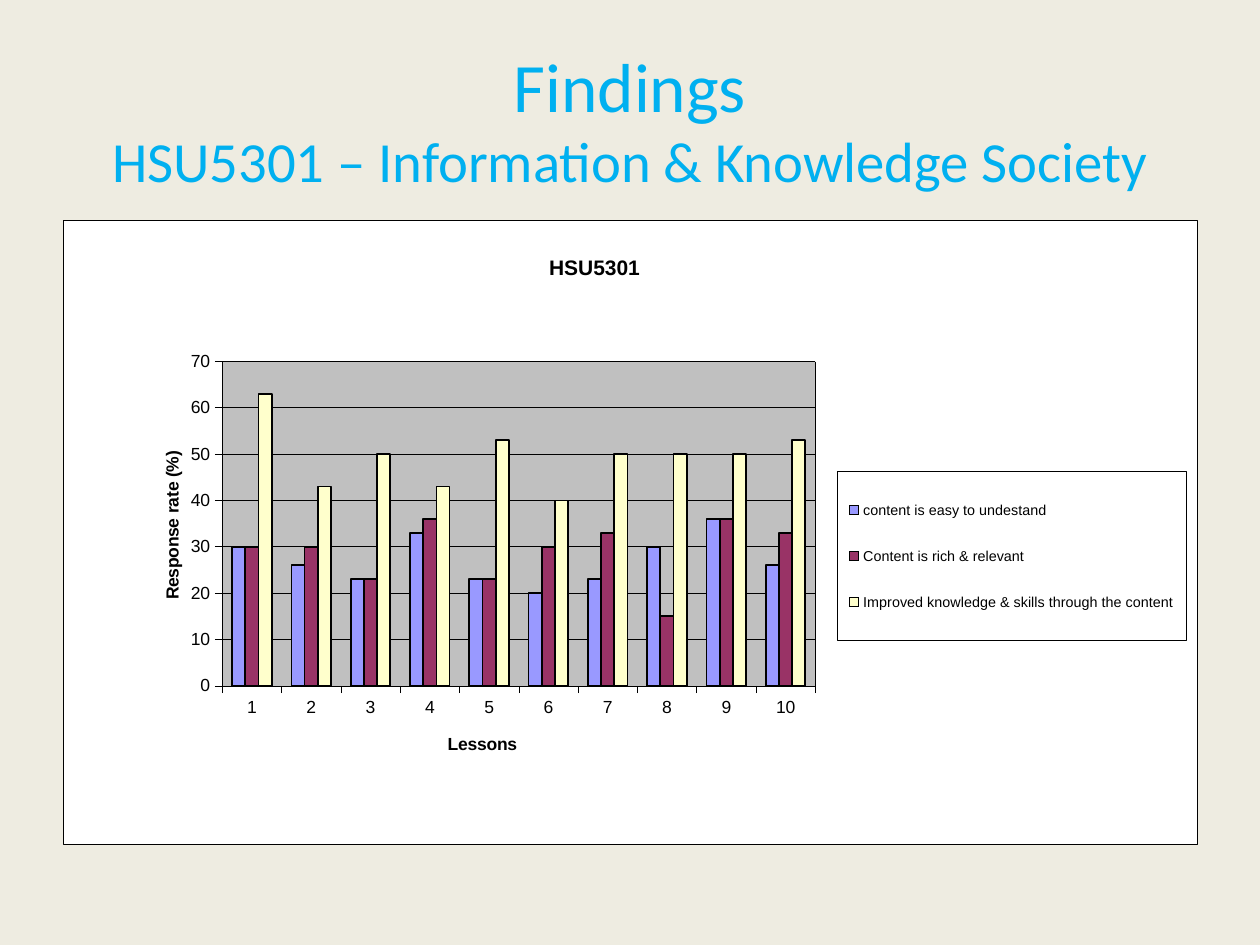
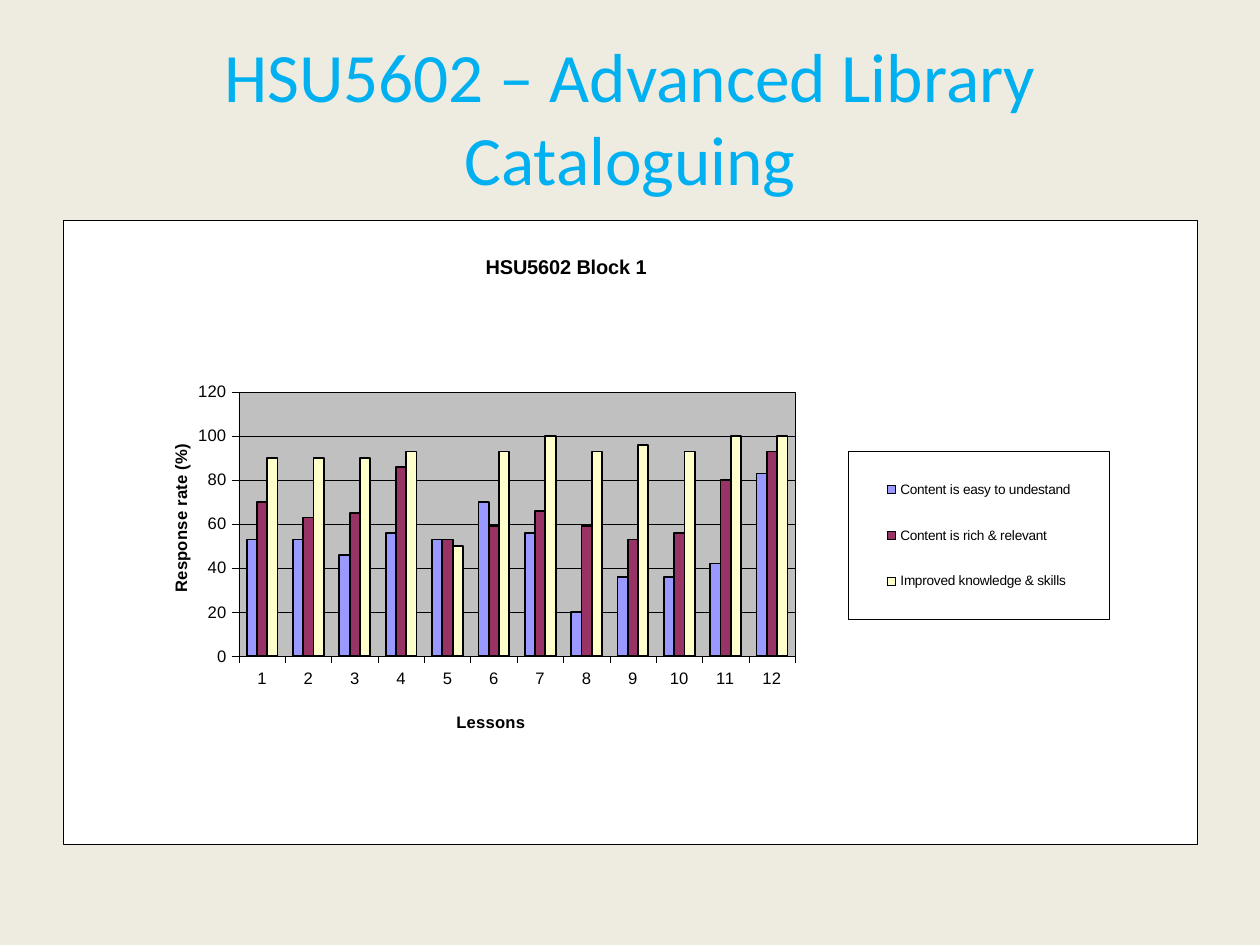
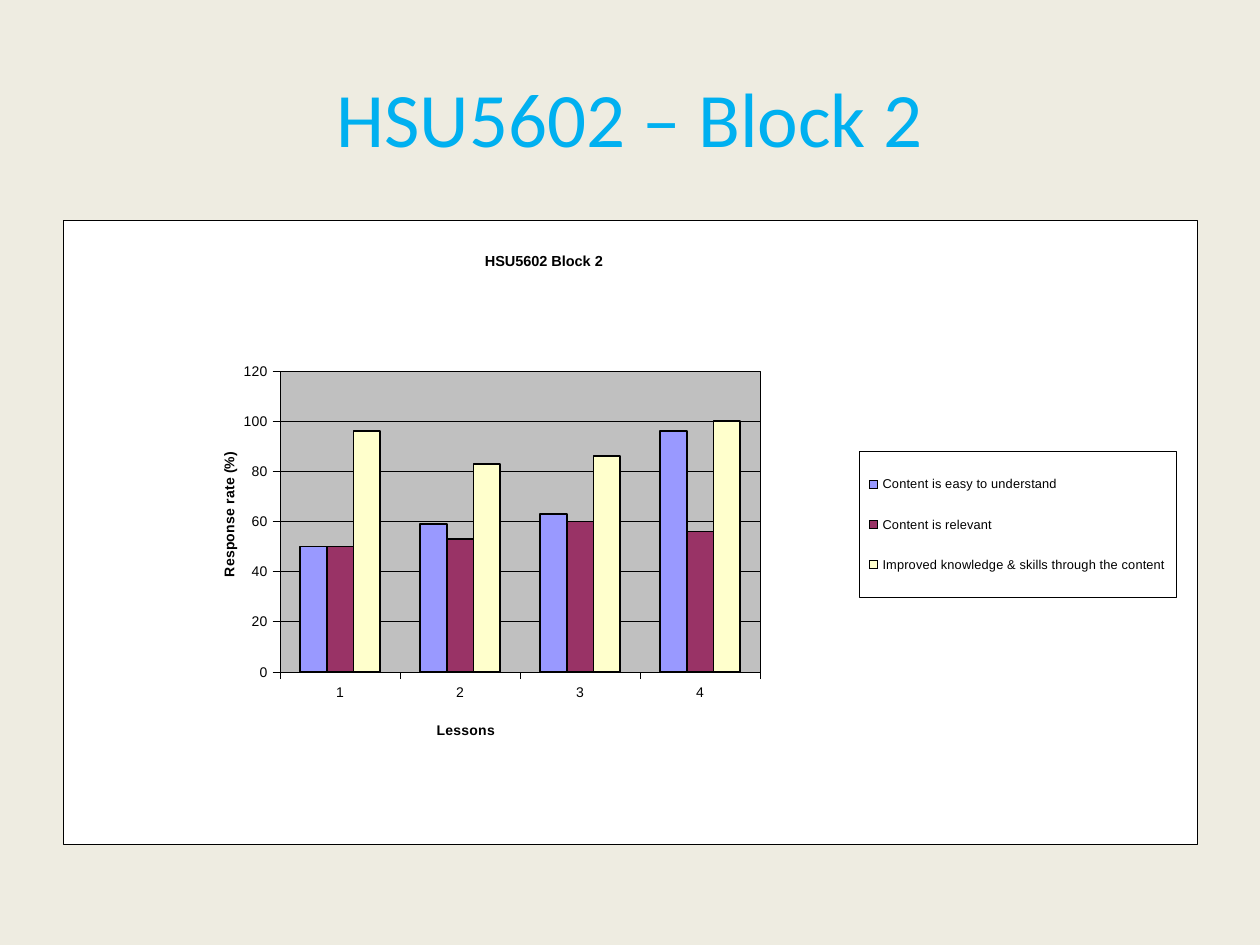
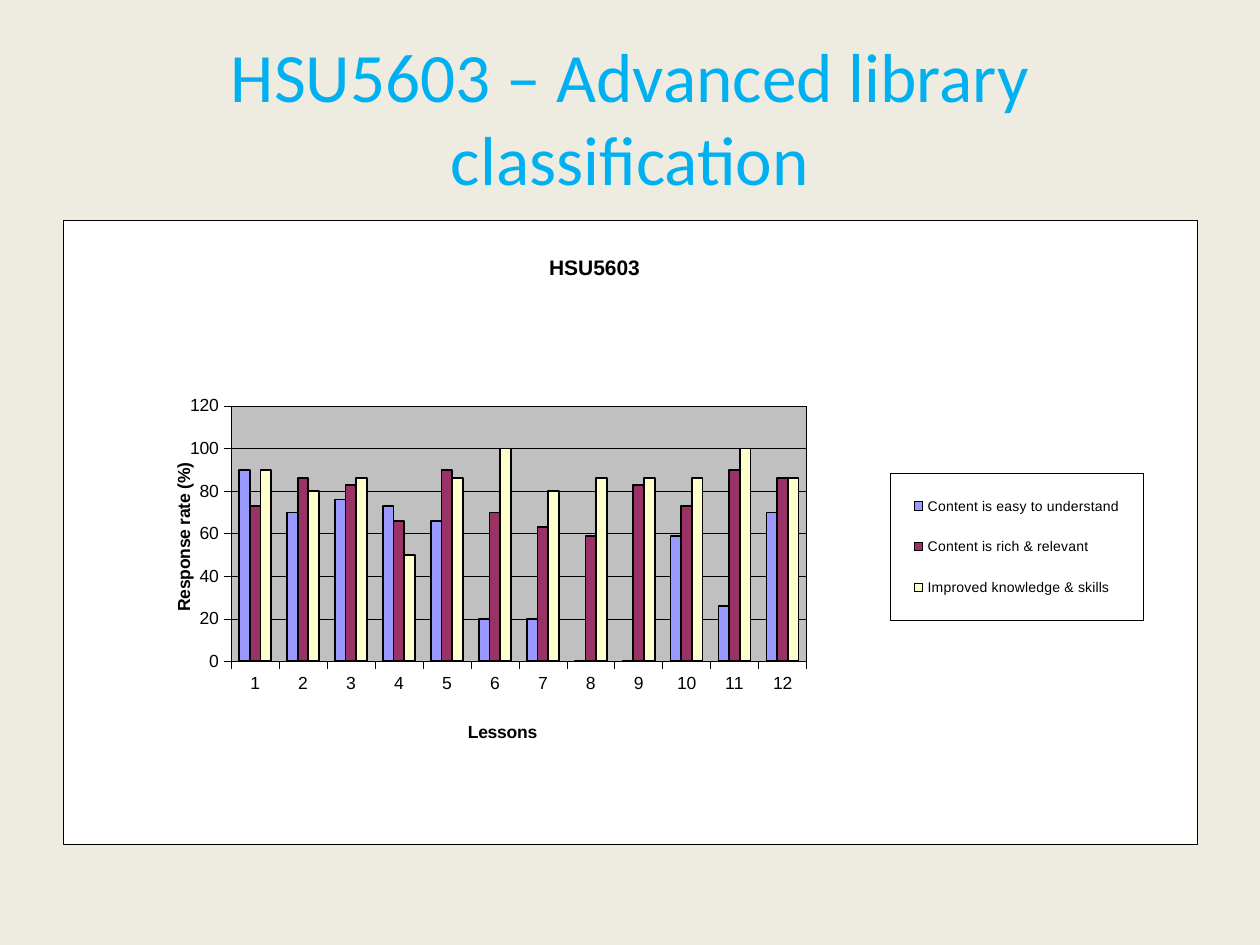
"""Build four slides of course survey findings, each with a clustered column chart."""
from lxml.etree import SubElement
from pptx import Presentation
from pptx.chart.data import CategoryChartData
from pptx.dml.color import RGBColor
from pptx.enum.chart import XL_CHART_TYPE as ChartType, XL_LEGEND_POSITION as LegendPos
from pptx.enum.chart import XL_TICK_MARK as TickMark
from pptx.enum.text import MSO_ANCHOR, MSO_AUTO_SIZE, PP_ALIGN
from pptx.oxml import parse_xml
from pptx.oxml.ns import nsdecls, qn
from pptx.util import Pt

BACKGROUND, TITLE_BLUE, BLACK, WHITE, PLOT_GREY = "EEECE1", "00B0F0", "000000", "FFFFFF", "C0C0C0"
SERIES_COLOURS = ["9999FF", "993366", "FFFFCC"]
CHART_FRAME = (36, 126, 648, 356.4)
HAIRLINE = 0.25

SLIDES = [
    {
        "heading": [("Findings\v", 39.6), ("HSU5301 – Information & Knowledge Society", 32.4)],
        "heading_box": (36, 23.76, 648, 87.84),
        "caption": ("HSU5301", 12, (275.5, 17)),
        "sizes": {"axes": 10, "legend": 8.2},
        "scale": (70, 10),
        "border_dash": "sysDot",
        "plot": (91, 80.5, 339, 185.5),
        "legend": (442.5, 143.5, 199.5, 96.5),
        "lessons_at": (218, 291),
        "rate_at": (54, 130),
        "responses": {
            "content is easy to undestand": [30, 26, 23, 33, 23, 20, 23, 30, 36, 26],
            "Content is rich & relevant": [30, 30, 23, 36, 23, 30, 33, 15, 36, 33],
            "Improved knowledge & skills through the content":
                [63, 43, 50, 43, 53, 40, 50, 50, 50, 53],
        },
    },
    {
        "heading": [("HSU5602 – Advanced Library Cataloguing", 39.6)],
        "heading_box": (36, 21.6, 648, 90),
        "caption": ("HSU5602 Block 1", 11.4, (239.5, 17)),
        "sizes": {"axes": 9.5, "legend": 7.8},
        "scale": (120, 20),
        "border_dash": "solid",
        "plot": (100.5, 98, 318, 151),
        "legend": (449, 132, 149, 96),
        "lessons_at": (223, 278.5),
        "rate_at": (59, 126),
        "responses": {
            "Content is easy to undestand": [53, 53, 46, 56, 53, 70, 56, 20, 36, 36, 42, 83],
            "Content is rich & relevant": [70, 63, 65, 86, 53, 59, 66, 59, 53, 56, 80, 93],
            "Improved knowledge & skills": [90, 90, 90, 93, 50, 93, 100, 93, 96, 93, 100, 100],
        },
    },
    {
        "heading": [("HSU5602 – Block 2", 44)],
        "heading_box": (36, 21.6, 648, 90),
        "caption": ("HSU5602 Block 2", 8.3, (239.5, 16)),
        "sizes": {"axes": 8, "legend": 7.3},
        "scale": (120, 20),
        "border_dash": "solid",
        "plot": (124, 86, 274.5, 172),
        "legend": (455, 132, 181, 83.5),
        "lessons_at": (212, 284.5),
        "rate_at": (88, 130.5),
        "responses": {
            "Content is easy to understand": [50, 59, 63, 96],
            "Content is relevant": [50, 53, 60, 56],
            "Improved knowledge & skills through the content": [96, 83, 86, 100],
        },
    },
    {
        "heading": [("HSU5603 – Advanced library classification", 39.6)],
        "heading_box": (36, 21.6, 648, 90),
        "caption": ("HSU5603", 12, (275.5, 17)),
        "sizes": {"axes": 10, "legend": 8},
        "scale": (120, 20),
        "border_dash": "solid",
        "plot": (96, 106, 329, 146),
        "legend": (473, 144.5, 144.5, 84),
        "lessons_at": (229.5, 284),
        "rate_at": (60.5, 136.5),
        "responses": {
            "Content is easy to understand": [90, 70, 76, 73, 66, 20, 20, 0, 0, 59, 26, 70],
            "Content is rich & relevant": [73, 86, 83, 66, 90, 70, 63, 59, 83, 73, 90, 86],
            "Improved knowledge & skills": [90, 80, 86, 50, 86, 100, 80, 86, 86, 86, 100, 86],
        },
    },
]


def rgb(colour):
    return RGBColor.from_string(colour)


def apply(target, values):
    for key, value in values.items():
        setattr(target, key, value)


def style_font(font, size, colour=BLACK, name="Arial", bold=False):
    apply(font, {"size": Pt(size), "name": name, "bold": bold})
    font.color.rgb = rgb(colour)


def style_line(line, width=HAIRLINE):
    line.width = Pt(width)
    line.color.rgb = rgb(BLACK)


def area_format(fill, dash="solid"):
    return parse_xml(
        f'<c:spPr {nsdecls("c", "a")}><a:solidFill><a:srgbClr val="{fill}"/></a:solidFill>'
        f'<a:ln w="{Pt(HAIRLINE)}"><a:solidFill><a:srgbClr val="{BLACK}"/></a:solidFill>'
        f'<a:prstDash val="{dash}"/></a:ln></c:spPr>')


def place(part, box, index=1, inner=False):
    """Set a manual layout from points measured inside the chart frame."""
    for old in part.findall(qn("c:layout")):
        part.remove(old)
    layout = parse_xml(f'<c:layout {nsdecls("c")}><c:manualLayout/></c:layout>')
    settings = [("layoutTarget", "inner")] if inner else []
    settings += [("xMode", "edge"), ("yMode", "edge")]
    settings += [(side, f"{length / CHART_FRAME[2 + i % 2]:.4f}")
                 for i, (side, length) in enumerate(zip("xywh", box))]
    for tag, value in settings:
        SubElement(layout[0], qn(f"c:{tag}"), val=value)
    part.insert(index, layout)


def label(title, text, size, at):
    title.text_frame.text = text
    style_font(title.text_frame.paragraphs[0].runs[0].font, size, bold=True)
    element = title.text_frame._txBody.getparent().getparent()
    place(element, at)
    return element


def style_axis(axis, text, size, at):
    apply(axis, {"major_tick_mark": TickMark.OUTSIDE, "minor_tick_mark": TickMark.NONE})
    style_font(axis.tick_labels.font, size)
    style_line(axis.format.line)
    return label(axis.axis_title, text, size, at)


def add_heading(slide, content):
    heading = slide.shapes.title
    apply(heading, dict(zip(("left", "top", "width", "height"), map(Pt, content["heading_box"]))))
    frame = heading.text_frame
    apply(frame, {"vertical_anchor": MSO_ANCHOR.MIDDLE, "auto_size": MSO_AUTO_SIZE.NONE,
                  "word_wrap": True})
    paragraph = frame.paragraphs[0]
    paragraph.alignment = PP_ALIGN.CENTER
    for text, size in content["heading"]:
        run = paragraph.add_run()
        run.text = text.rstrip("\v")
        style_font(run.font, size, TITLE_BLUE, "Calibri")
        if text.endswith("\v"):
            paragraph.add_line_break()


def add_responses(slide, content):
    responses, sizes = content["responses"], content["sizes"]
    lesson_count = len(next(iter(responses.values())))
    data = CategoryChartData()
    data.categories = [str(number + 1) for number in range(lesson_count)]
    for statement, rates in responses.items():
        data.add_series(statement, rates)
    chart = slide.shapes.add_chart(
        ChartType.COLUMN_CLUSTERED, *map(Pt, CHART_FRAME), data).chart

    style_font(chart.font, sizes["axes"])
    chart.element.find(qn("c:txPr")).addprevious(area_format(WHITE))
    label(chart.chart_title, *content["caption"])

    columns = chart.plots[0]
    apply(columns, {"gap_width": 150, "overlap": 0, "vary_by_categories": False})
    for statement, colour in zip(columns.series, SERIES_COLOURS):
        statement.format.fill.solid()
        statement.format.fill.fore_color.rgb = rgb(colour)
        style_line(statement.format.line, 1)

    style_axis(chart.category_axis, "Lessons", sizes["axes"], content["lessons_at"])
    rate_axis = chart.value_axis
    rate_title = style_axis(rate_axis, "Response rate (%)", sizes["axes"], content["rate_at"])
    rate_title.find(".//" + qn("a:bodyPr")).set("rot", "-5400000")
    top, step = content["scale"]
    apply(rate_axis, {"minimum_scale": 0, "maximum_scale": top, "major_unit": step,
                      "has_major_gridlines": True})
    style_line(rate_axis.major_gridlines.format.line)

    plot_area = chart.element.find(".//" + qn("c:plotArea"))
    place(plot_area, content["plot"], index=0, inner=True)
    plot_area.append(area_format(PLOT_GREY, content["border_dash"]))

    chart.has_legend = True
    apply(chart.legend, {"position": LegendPos.RIGHT, "include_in_layout": False})
    style_font(chart.legend.font, sizes["legend"])
    legend = chart.element.find(".//" + qn("c:legend"))
    place(legend, content["legend"])
    legend.find(qn("c:txPr")).addprevious(area_format(WHITE))


def main():
    deck = Presentation()
    apply(deck, {"slide_width": Pt(720), "slide_height": Pt(540)})
    backdrop = deck.slide_master.background.fill
    backdrop.solid()
    backdrop.fore_color.rgb = rgb(BACKGROUND)
    for content in SLIDES:
        slide = deck.slides.add_slide(deck.slide_layouts[5])
        add_heading(slide, content)
        add_responses(slide, content)
    deck.save("out.pptx")


if __name__ == "__main__":
    main()
